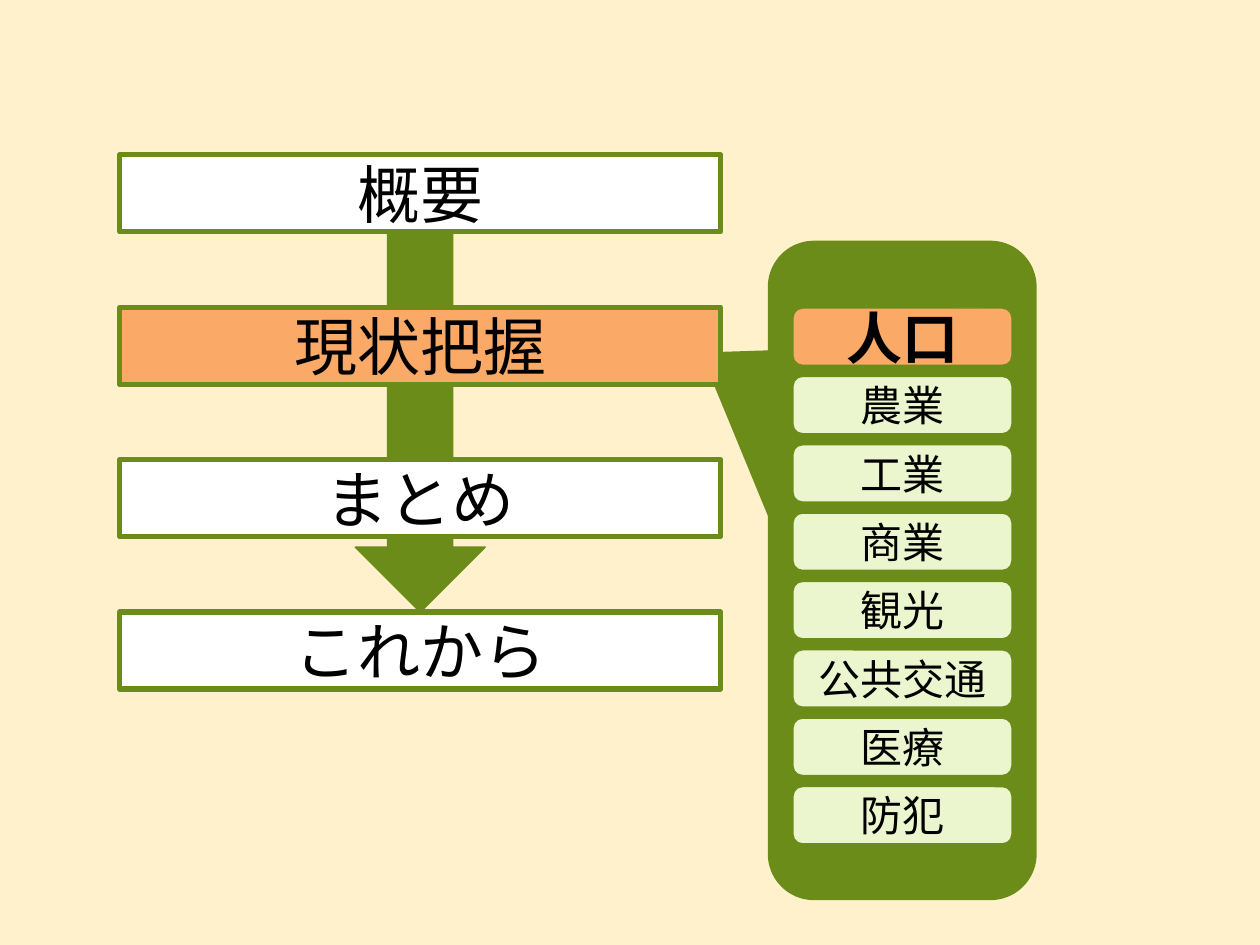
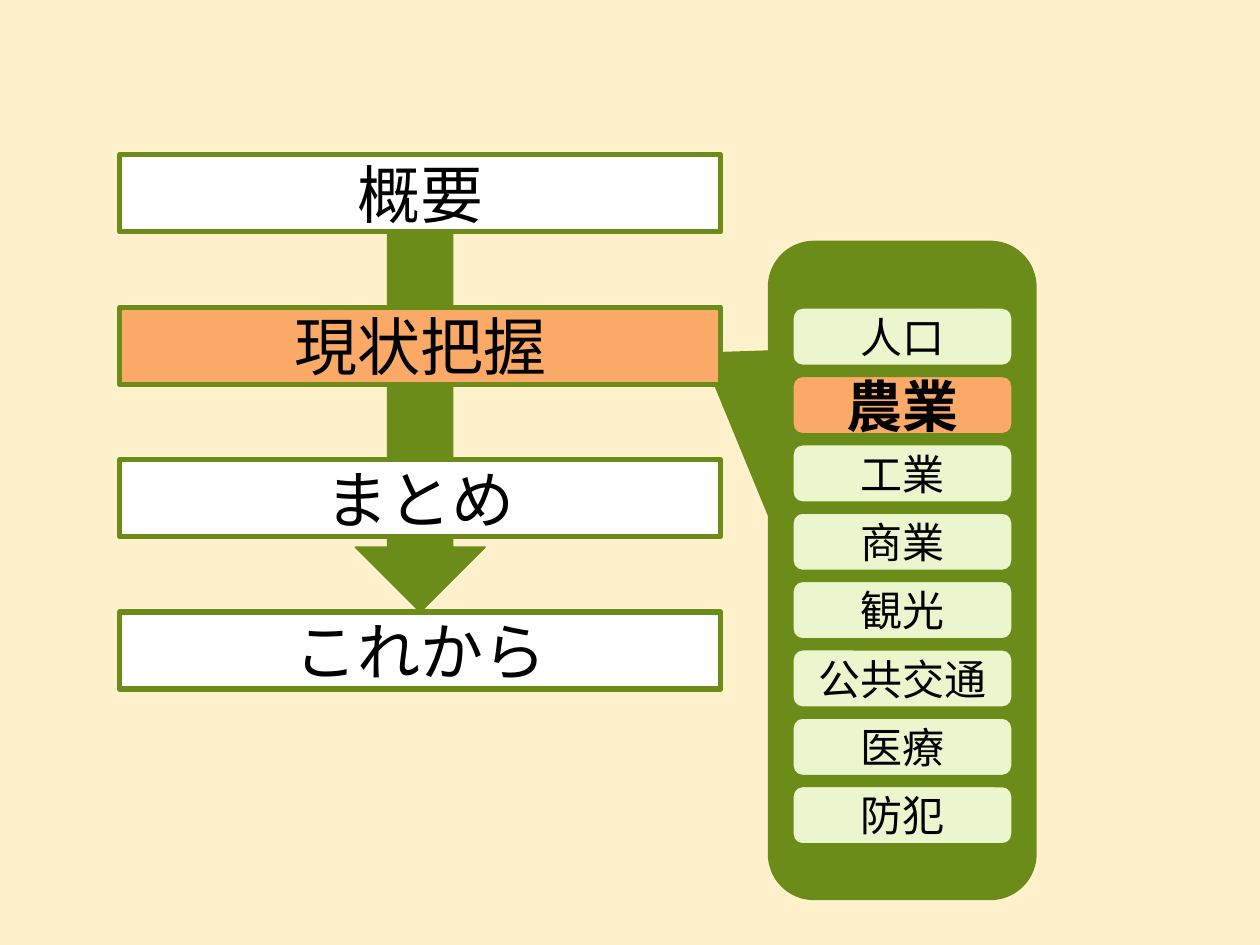
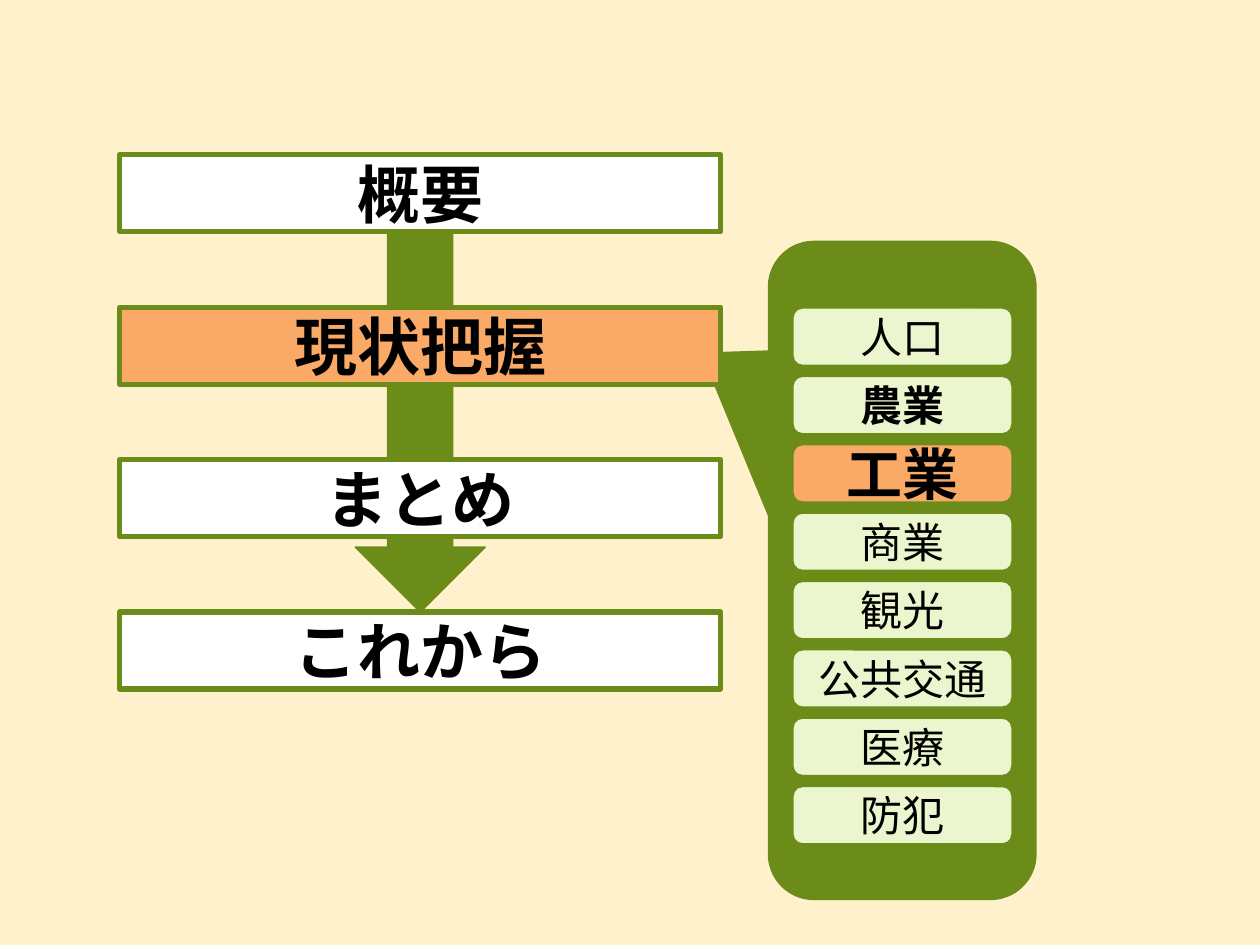
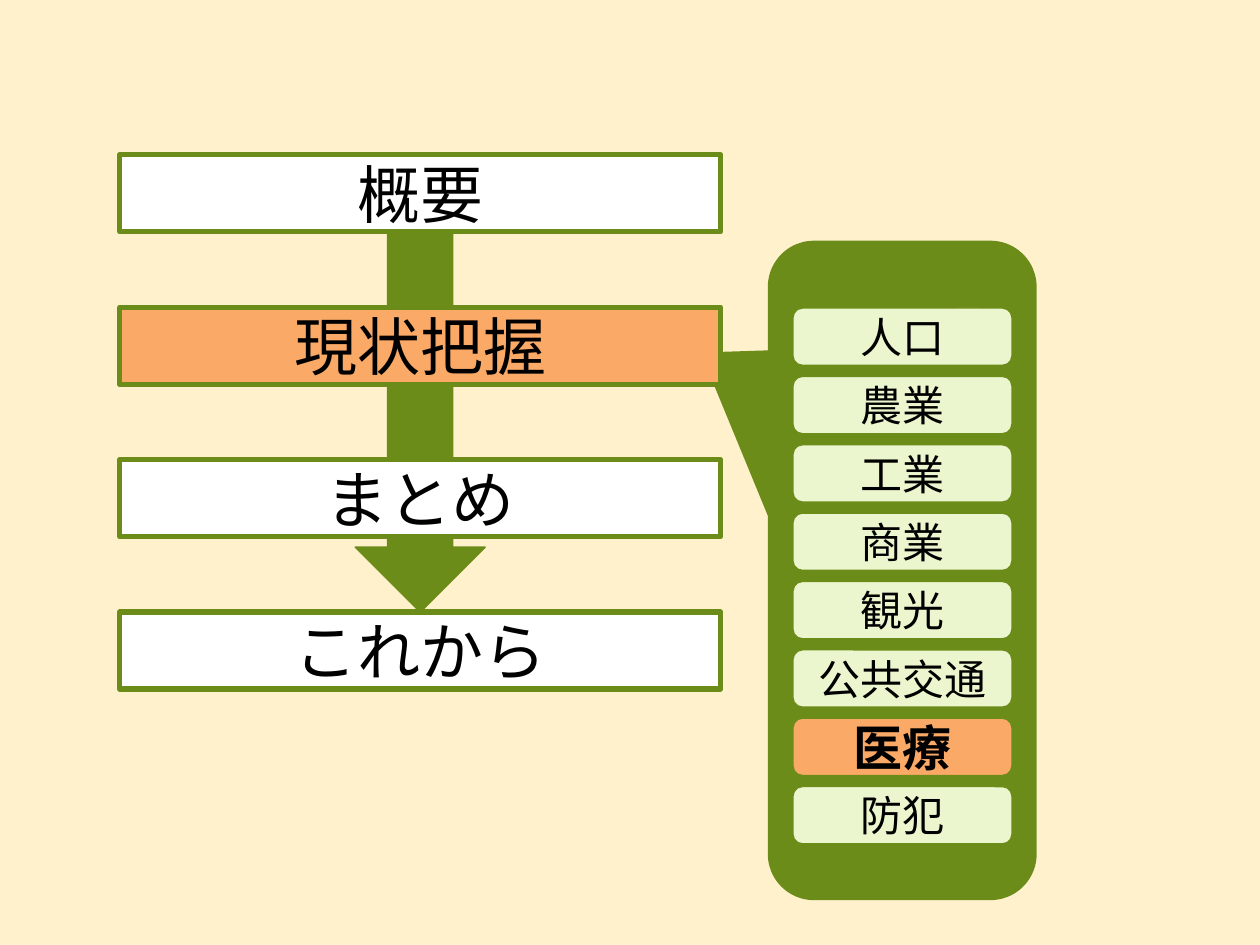
import pptx
import pptx.dml.color
import pptx.enum.shapes
import pptx.enum.text
import pptx.util

Pt = pptx.util.Pt
SHAPE = pptx.enum.shapes.MSO_SHAPE

# Content
STEPS = ["概要", "現状把握", "まとめ", "これから"]
CURRENT_STEP = "現状把握"
TOPICS = ["人口", "農業", "工業", "商業", "観光", "公共交通", "医療", "防犯"]
SLIDES = [
    {"topic": "人口", "size": 32},
    {"topic": "農業", "size": 32},
    {"topic": "工業", "size": 32, "bold_steps": True, "bold_topics": ["農業"]},
    {"topic": "医療", "size": 28},
]

# Shared style, lengths in points
COLORS = {
    "background": "FFF1CB",
    "green": "6C8C1A",
    "highlight": "FAA966",
    "step": "FFFFFF",
    "topic": "EBF6CE",
    "text": "000000",
}
FONT = "Calibri"
THIN, THICK = 0.85, 3
STEP_SIZE, TOPIC_SIZE = 36, 24

# Layout: left, top, width, height of the first box, and the row pitch
STEP_BOX, STEP_PITCH = (68.4, 88.5, 343.5, 44), 87.1
TOPIC_BOX, TOPIC_PITCH = (453.1, 176, 125.2, 32.8), 39.06
PANEL_BOX = (439.2, 138, 152.8, 376)
ARROW_WIDTH, ARROW_TOP = 74.2, 126.7


def rgb(name):
    return pptx.dml.color.RGBColor.from_string(COLORS[name])


def add_shape(slide, kind, box, fill, line_width=THIN):
    sp = slide.shapes.add_shape(kind, *map(Pt, box))
    sp.shadow.inherit = False
    sp.fill.solid()
    sp.fill.fore_color.rgb = rgb(fill)
    sp.line.color.rgb = rgb("green")
    sp.line.width = Pt(line_width)
    return sp


def set_label(sp, text, size, bold):
    tf = sp.text_frame
    tf.text = text
    tf.vertical_anchor = pptx.enum.text.MSO_ANCHOR.MIDDLE
    p = tf.paragraphs[0]
    p.alignment = pptx.enum.text.PP_ALIGN.CENTER
    font = p.runs[0].font
    font.name, font.size, font.bold = FONT, Pt(size), bold
    font.color.rgb = rgb("text")


def row_box(first, pitch, row):
    left, top, width, height = first
    return left, top + row * pitch, width, height


def add_backdrop(slide):
    # Callout panel pointing at the current step
    panel = add_shape(slide, SHAPE.ROUNDED_RECTANGULAR_CALLOUT, PANEL_BOX, "green")
    for i, value in enumerate((-0.75, -0.33, 0.17)):
        panel.adjustments[i] = value
    # Arrow running down to the last step
    left, top, width, _ = row_box(STEP_BOX, STEP_PITCH, len(STEPS) - 1)
    arrow_left = left + (width - ARROW_WIDTH) / 2
    add_shape(slide, SHAPE.DOWN_ARROW,
              (arrow_left, ARROW_TOP, ARROW_WIDTH, top - ARROW_TOP), "green")


def add_steps(slide, bold):
    for row, step in enumerate(STEPS):
        fill = "highlight" if step == CURRENT_STEP else "step"
        sp = add_shape(slide, SHAPE.RECTANGLE,
                       row_box(STEP_BOX, STEP_PITCH, row), fill, THICK)
        set_label(sp, step, STEP_SIZE, bold)


def add_topics(slide, current, current_size, bold_topics):
    for row, topic in enumerate(TOPICS):
        active = topic == current
        sp = add_shape(slide, SHAPE.ROUNDED_RECTANGLE,
                       row_box(TOPIC_BOX, TOPIC_PITCH, row),
                       "highlight" if active else "topic")
        set_label(sp, topic, current_size if active else TOPIC_SIZE,
                  active or topic in bold_topics)


def main():
    prs = pptx.Presentation()
    prs.slide_width, prs.slide_height = Pt(720), Pt(540)
    background = prs.slide_master.background.fill
    background.solid()
    background.fore_color.rgb = rgb("background")

    for content in SLIDES:
        slide = prs.slides.add_slide(prs.slide_layouts[6])
        add_backdrop(slide)
        add_steps(slide, content.get("bold_steps", False))
        add_topics(slide, content["topic"], content["size"],
                   content.get("bold_topics", []))
    prs.save("out.pptx")


if __name__ == "__main__":
    main()
